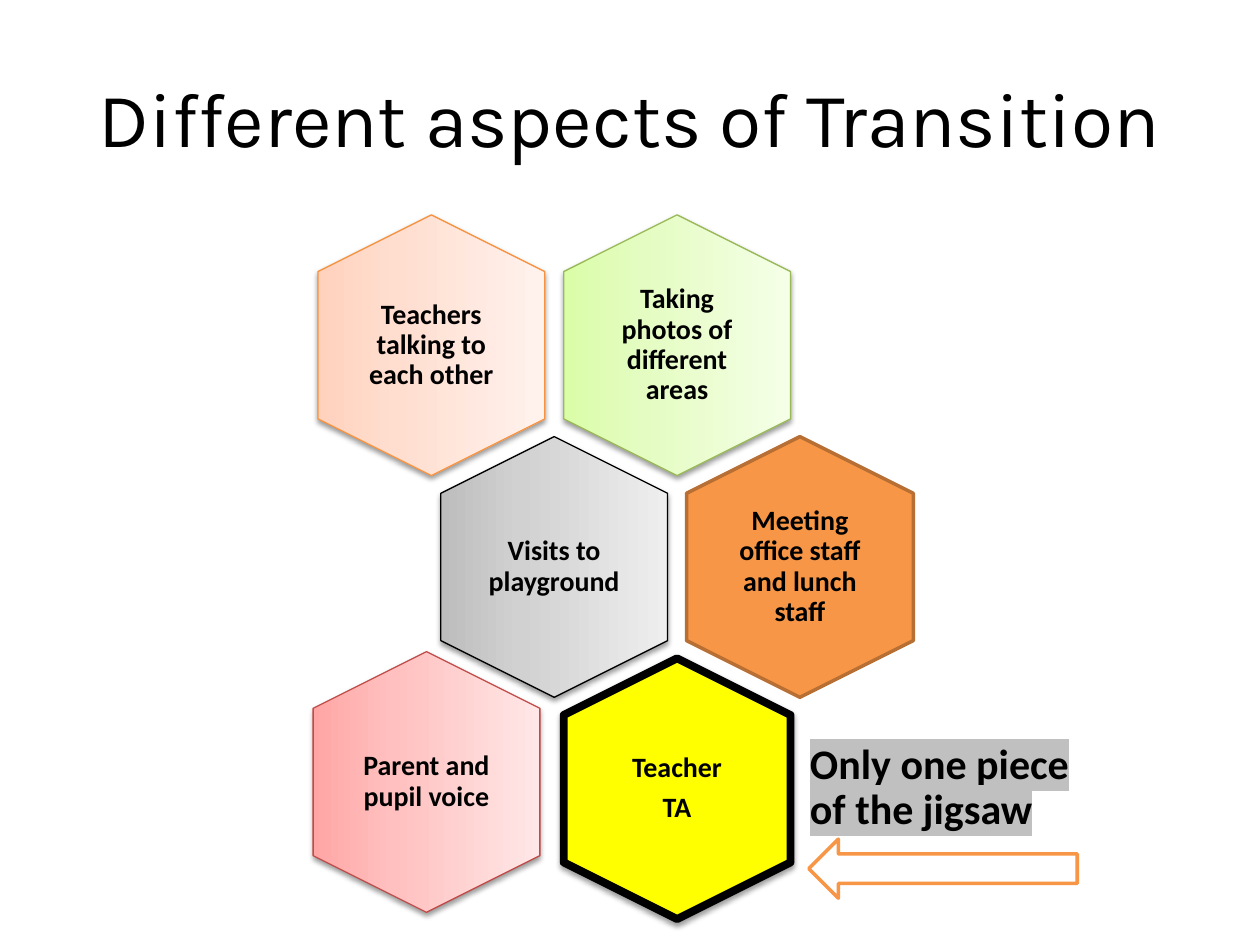
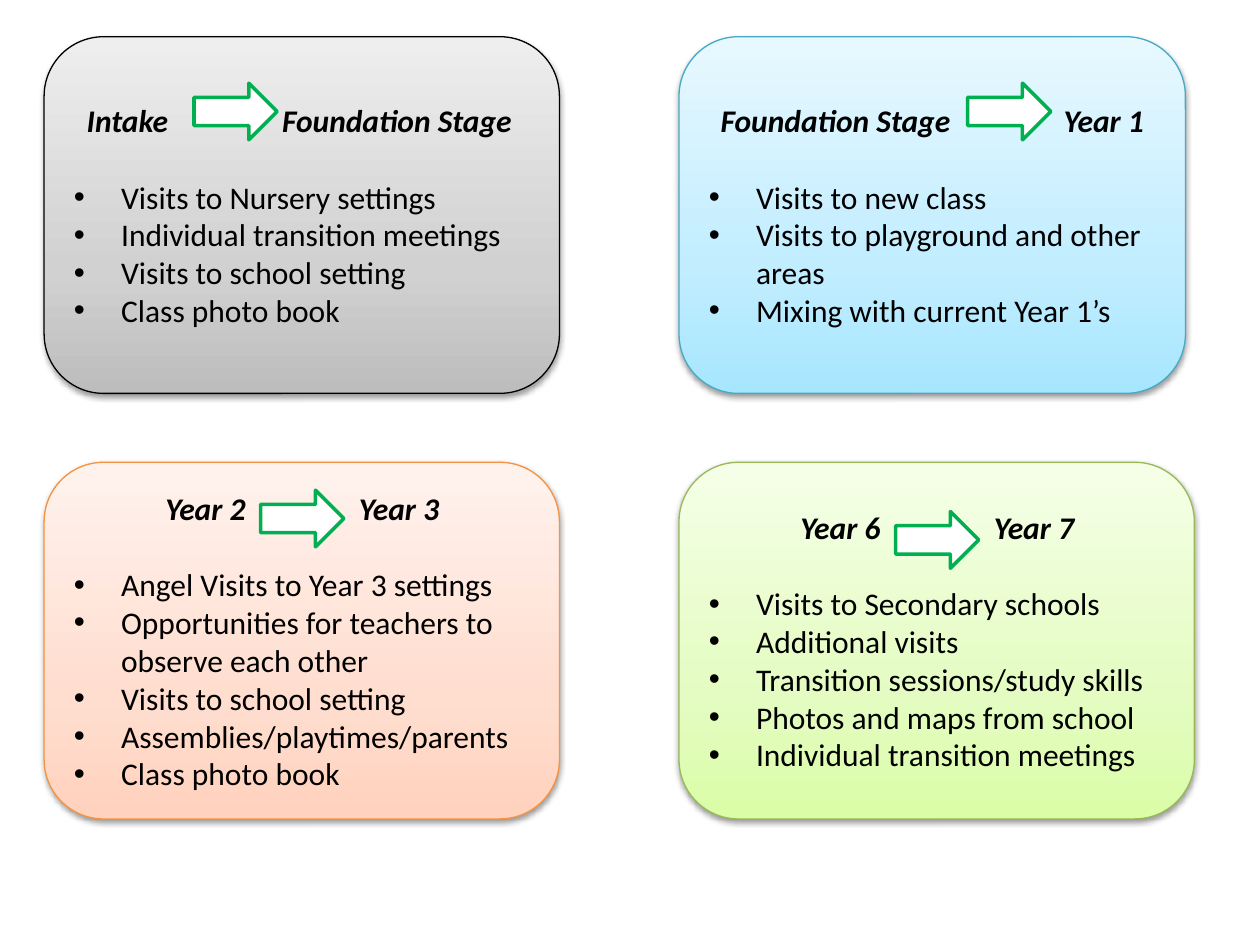
import copy
from dataclasses import dataclass

import pptx
import pptx.dml.color
import pptx.enum.shapes
import pptx.enum.text
import pptx.oxml
import pptx.oxml.ns
import pptx.util
from lxml import etree

Pt = pptx.util.Pt
qn = pptx.oxml.ns.qn
Shape = pptx.enum.shapes.MSO_SHAPE
Align = pptx.enum.text.PP_ALIGN
Anchor = pptx.enum.text.MSO_ANCHOR


@dataclass(frozen=True)
class Tint:
    """A line colour with a solid fill or the stops of a gradient."""
    line: str
    fill: tuple
    weight: float = 0.75
    shadow: bool = True


@dataclass(frozen=True)
class Theme:
    title_font: str = "Karla"
    body_font: str = "Calibri"
    title_size: int = 44
    caption_size: int = 24
    panel_size: int = 18
    label_size: int = 16
    ink: str = "000000"
    highlight: str = "C0C0C0"
    peach: Tint = Tint("F69240", ("FFD2BD", "FFDED0", "FFF2ED"))
    green: Tint = Tint("98B955", ("DAFDA7", "E4FCC2", "F5FFE7"))
    grey: Tint = Tint("000000", ("BDBDBD", "D1D1D1", "EEEEEE"))
    blue: Tint = Tint("46AAC5", ("A7E6FF", "C1EDFF", "E7F8FF"))
    pink: Tint = Tint("BF4C48", ("FFA6A5", "FFC0BF", "FFE7E7"))
    orange: Tint = Tint("B76F34", ("F79646",), 2, False)
    yellow: Tint = Tint("000000", ("FFFF00",), 4.5)
    orange_arrow: Tint = Tint("F79646", ("FFFFFF",), 2, False)
    green_arrow: Tint = Tint("00B050", ("FFFFFF",), 2, False)


THEME = Theme()
GRADIENT_POSITIONS = (0, 0.35, 1)

HEX_LENGTH, HEX_WIDTH = 149, 129.6
HEX_LEFT, HEX_TOP = 172, 132.5
HEX_COLUMN, HEX_ROW = 140.4, 126.7
LABEL_WIDTH, LABEL_HEIGHT = 89.3, 103

# column, row, tint, lines of the label
ASPECTS = (
    (0, 0, THEME.peach, ["Teachers talking to each other"]),
    (1, 0, THEME.green, ["Taking photos of different areas"]),
    (0.5, 1, THEME.grey, ["Visits to playground"]),
    (1.5, 1, THEME.orange, ["Meeting office staff and lunch staff"]),
    (1, 2, THEME.yellow, ["Teacher", "TA"]),
    (-0.02, 1.97, THEME.pink, ["Parent and pupil voice"]),
)

PANEL_LEFTS, PANEL_TOPS = (25.2, 388), (21, 264.2)
PANEL_HEIGHT = 203.8

# column, row, width, tint, stages, stage tab stops, arrow offset, points
STAGES = (
    (0, 0, 294.5, THEME.grey, ("Intake", "Foundation Stage"), (7.3, 119),
     (85.7, 26.5),
     ("Visits to Nursery settings", "Individual transition meetings",
      "Visits to school setting", "Class photo book")),
    (1, 0, 289.4, THEME.blue, ("Foundation Stage", "Year 1"), (6.8, 202.8),
     (165, 26.5),
     ("Visits to new class", "Visits to playground and other areas",
      "Mixing with current Year 1’s")),
    (0, 1, 294.5, THEME.peach, ("Year 2", "Year 3"), (52.3, 162.9),
     (123.8, 15.9),
     ("Angel Visits to Year 3 settings",
      "Opportunities for teachers to observe each other",
      "Visits to school setting", "Assemblies/playtimes/parents",
      "Class photo book")),
    (1, 1, 294.5, THEME.green, ("Year 6", "Year 7"), (52.3, 162.9),
     (123.8, 28.1),
     ("Visits to Secondary schools", "Additional visits",
      "Transition sessions/study skills", "Photos and maps from school",
      "Individual transition meetings")),
)


def rgb(value):
    return pptx.dml.color.RGBColor.from_string(value)


def add_xml(parent, tag, **attributes):
    return etree.SubElement(parent, qn(tag), attributes)


def paint_gradient(shape, colours):
    """Run the colours from the bottom of the shape to its top."""
    shape.fill.gradient()
    shape.fill.gradient_angle = 90
    stop_list = shape._element.spPr.find(".//" + qn("a:gsLst"))
    stop_list.append(copy.deepcopy(stop_list[0]))
    stops = shape.fill.gradient_stops
    for stop, colour, position in zip(stops, colours, GRADIENT_POSITIONS):
        stop.color.rgb = rgb(colour)
        stop.position = position


def add_soft_shadow(shape):
    effects = shape._element.spPr.find(qn("a:effectLst"))
    shadow = add_xml(effects, "a:outerShdw", blurRad=str(Pt(3.1)),
                     dist=str(Pt(1.6)), dir="5400000", rotWithShape="0")
    colour = add_xml(shadow, "a:srgbClr", val="000000")
    add_xml(colour, "a:alpha", val="38000")


def add_tinted(page, kind, left, top, width, height, tint):
    shape = page.shapes.add_shape(kind, Pt(left), Pt(top), Pt(width), Pt(height))
    shape.shadow.inherit = False
    if len(tint.fill) == 1:
        shape.fill.solid()
        shape.fill.fore_color.rgb = rgb(tint.fill[0])
    else:
        paint_gradient(shape, tint.fill)
    shape.line.color.rgb = rgb(tint.line)
    shape.line.width = Pt(tint.weight)
    if tint.shadow:
        add_soft_shadow(shape)
    return shape


def style(para, size, align=Align.LEFT, name=THEME.body_font, bold=False,
          italic=False):
    para.alignment = align
    font = para.font
    font.name, font.size, font.bold, font.italic = name, Pt(size), bold, italic
    font.color.rgb = rgb(THEME.ink)


def add_text(page, left, top, width, height, lines, inset, **look):
    box = page.shapes.add_textbox(Pt(left), Pt(top), Pt(width), Pt(height))
    frame = box.text_frame
    frame.word_wrap = True
    frame.vertical_anchor = Anchor.MIDDLE
    frame.margin_left = frame.margin_right = Pt(inset)
    frame.margin_top = frame.margin_bottom = Pt(inset)
    frame.text = "\n".join(lines)
    for para in frame.paragraphs:
        style(para, **look)
    return frame


def tighten(frame, size):
    for para in frame.paragraphs:
        para.line_spacing = 0.9
        para.space_after = Pt(0.35 * size)


def add_aspect(page, column, row, tint, lines):
    left = HEX_LEFT + column * HEX_COLUMN
    top = HEX_TOP + row * HEX_ROW
    hexagon = add_tinted(page, Shape.HEXAGON, left, top, HEX_LENGTH, HEX_WIDTH,
                         tint)
    hexagon.adjustments[0] = 0.25
    hexagon.rotation = 90
    label = add_text(page, left + (HEX_LENGTH - LABEL_WIDTH) / 2,
                     top + (HEX_WIDTH - LABEL_HEIGHT) / 2,
                     LABEL_WIDTH, LABEL_HEIGHT, lines, 5,
                     size=THEME.label_size, align=Align.CENTER, bold=True)
    tighten(label, THEME.label_size)


def add_caption(page, text):
    frame = add_text(page, 455.8, 406, 166.3, 89.3, [text], 7,
                     size=THEME.caption_size, bold=True)
    tighten(frame, THEME.caption_size)
    span = frame.paragraphs[0].runs[0]
    marker = add_xml(span._r.get_or_add_rPr(), "a:highlight")
    add_xml(marker, "a:srgbClr", val=THEME.highlight)


def write_heading(para, stages, tab_stops):
    para.text = "".join("\t" + stage for stage in stages)
    tabs = add_xml(para._p.get_or_add_pPr(), "a:tabLst")
    for position in tab_stops:
        add_xml(tabs, "a:tab", pos=str(Pt(position)), algn="l")
    style(para, THEME.panel_size, bold=True, italic=True)
    para.space_after = Pt(22)


def write_bullet(para, text):
    para.text = text
    properties = para._p.get_or_add_pPr()
    properties.set("marL", str(Pt(27)))
    properties.set("indent", str(-Pt(27)))
    add_xml(properties, "a:buFont", typeface="Arial")
    add_xml(properties, "a:buChar", char="•")
    style(para, THEME.panel_size)


def add_stage_panel(page, column, row, width, tint, stages, tab_stops,
                    arrow_offset, points):
    left, top = PANEL_LEFTS[column], PANEL_TOPS[row]
    panel = add_tinted(page, Shape.ROUNDED_RECTANGLE, left, top, width,
                       PANEL_HEIGHT, tint)
    frame = panel.text_frame
    frame.word_wrap = True
    frame.vertical_anchor = Anchor.MIDDLE
    write_heading(frame.paragraphs[0], stages, tab_stops)
    for point in points:
        write_bullet(frame.add_paragraph(), point)
    add_tinted(page, Shape.RIGHT_ARROW, left + arrow_offset[0],
               top + arrow_offset[1], 47.5, 32.4, THEME.green_arrow)


def build_aspects(page):
    add_text(page, 36, 21.6, 648, 90, ["Different aspects of Transition"], 3.6,
             size=THEME.title_size, align=Align.CENTER, name=THEME.title_font)
    for aspect in ASPECTS:
        add_aspect(page, *aspect)
    add_caption(page, "Only one piece of the jigsaw")
    add_tinted(page, Shape.LEFT_ARROW, 462.2, 479.5, 153.4, 33.8,
               THEME.orange_arrow)


def build_stages(page):
    for stage in STAGES:
        add_stage_panel(page, *stage)


def main():
    deck = pptx.Presentation()
    deck.slide_width, deck.slide_height = Pt(720), Pt(540)
    for build in (build_aspects, build_stages):
        build(deck.slides.add_slide(deck.slide_layouts[6]))
    deck.save("out.pptx")


if __name__ == "__main__":
    main()
